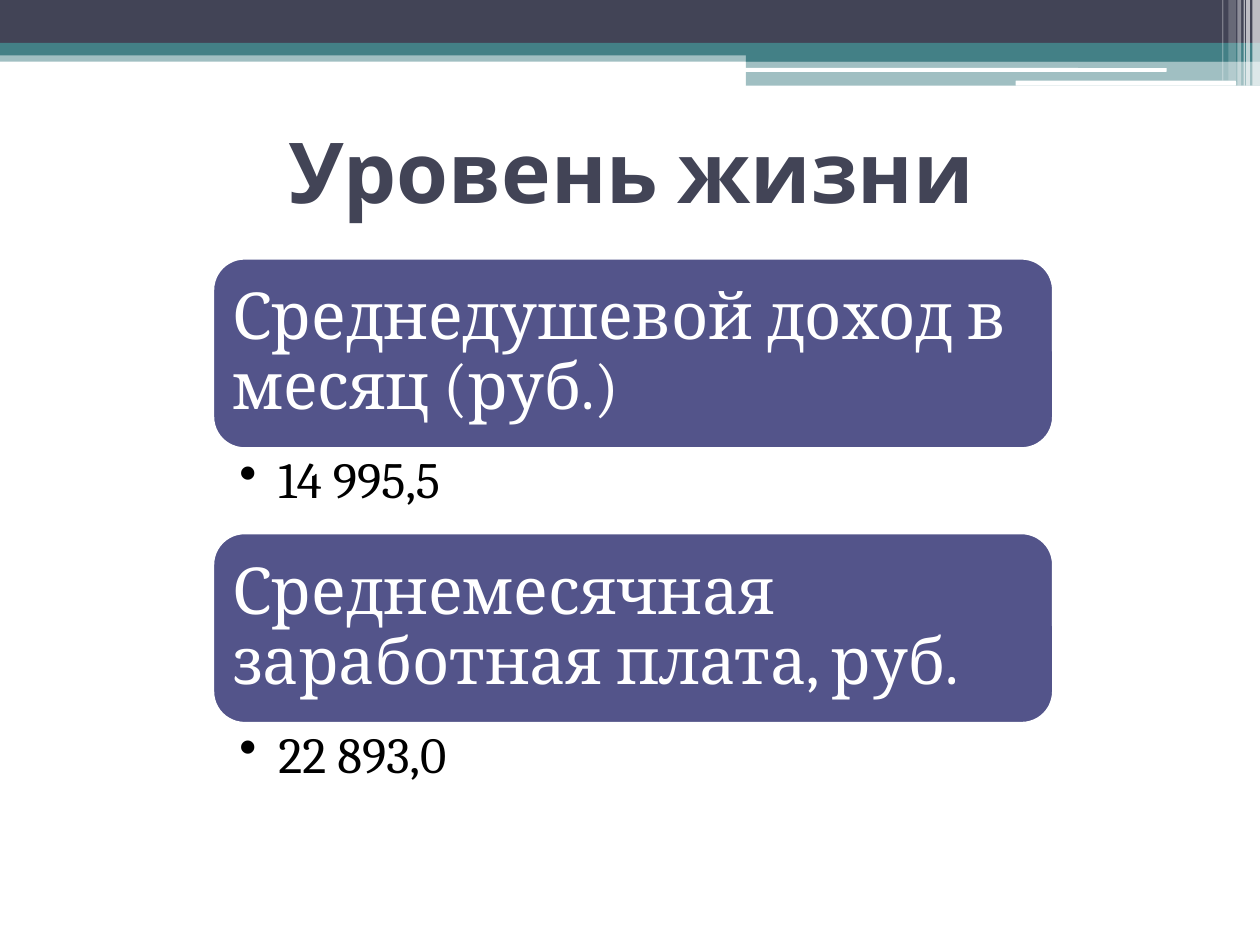
from lxml.etree import SubElement
from pptx import Presentation
from pptx.dml.color import RGBColor
from pptx.enum.shapes import MSO_SHAPE as Shape
from pptx.enum.text import MSO_ANCHOR as Anchor, MSO_AUTO_SIZE as AutoSize, PP_ALIGN as Align
from pptx.oxml.ns import qn
from pptx.util import Inches, Pt

COLORS = {"navy": "424456", "teal": "438086", "indigo": "53548A",
          "white": "FFFFFF", "black": "000000"}
TITLE = "Уровень жизни"
INDICATORS = [
    ("Среднедушевой доход в месяц (руб.)", "14 995,5"),
    ("Среднемесячная заработная плата, руб.", "22 893,0"),
]
BANDS = [
    (0, 0.4, 10, 0.09, "teal", 50),
    (0, 0, 10, 0.34, "navy", 100),
    (0, 0.34, 10, 0.1, "teal", 100),
    (5.92, 0.39, 4.08, 0.1, "teal", 100),
    (5.92, 0.48, 4.08, 0.2, "teal", 50),
]
RULES = [(5.91, 0.54, 3.35, 0.03), (8.06, 0.64, 1.75, 0.04)]
STRIPES = [
    (9.94, 0.06, 0.68, 65),
    (9.89, 0.03, 0.68, 65),
    (9.87, 0.01, 0.68, 60),
    (9.82, 0.03, 0.68, 40),
    (9.75, 0.06, 0.64, 20),
    (9.7, 0.01, 0.64, 30),
]
LEFT, TOP, WIDTH = 1.69, 2.05, 6.67
CARD_H, VALUE_H = 1.51, 0.67


def color(name):
    return RGBColor.from_string(COLORS[name])


def add_box(s, kind, x, y, w, h, fill, alpha=100, line=None):
    sp = s.shapes.add_shape(kind, Inches(x), Inches(y), Inches(w), Inches(h))
    sp.shadow.inherit = False
    sp.fill.solid()
    sp.fill.fore_color.rgb = color(fill)
    if alpha < 100:
        clr = sp.fill._xPr.find(qn("a:solidFill"))[0]
        SubElement(clr, qn("a:alpha"), val=str(alpha * 1000))
    if line:
        sp.line.color.rgb = color(line)
        sp.line.width = Pt(1.5)
    else:
        sp.line.fill.background()
    return sp


def write(sp, text, size, font, fill, bold=False, align=Align.LEFT,
          anchor=Anchor.MIDDLE, insets=(0.1, 0.05, 0.1, 0.05), spacing=None, indent=None):
    tf = sp.text_frame
    tf.word_wrap = True
    tf.auto_size = AutoSize.NONE
    tf.vertical_anchor = anchor
    tf.margin_left, tf.margin_top, tf.margin_right, tf.margin_bottom = map(Inches, insets)
    p = tf.paragraphs[0]
    p.alignment = align
    if spacing:
        p.line_spacing = spacing
    if indent:
        pPr = p._p.get_or_add_pPr()
        pPr.set("marL", str(Inches(indent)))
        pPr.set("indent", str(-Inches(indent)))
        SubElement(pPr, qn("a:buChar"), char="•")
    r = p.add_run()
    r.text = text
    r.font.size = Pt(size)
    r.font.name = font
    r.font.bold = bold
    r.font.color.rgb = color(fill)


prs = Presentation()
prs.slide_width, prs.slide_height = Inches(10), Inches(7.5)
s = prs.slides.add_slide(prs.slide_layouts[5])

for x, y, w, h, fill, alpha in BANDS:
    add_box(s, Shape.RECTANGLE, x, y, w, h, fill, alpha)
for x, y, w, h in RULES:
    add_box(s, Shape.ROUNDED_RECTANGLE, x, y, w, h, "white")
for x, w, h, alpha in STRIPES:
    add_box(s, Shape.RECTANGLE, x, 0, w, h, "white", alpha)

title = s.shapes.title
title.left, title.top, title.width, title.height = map(Inches, (0.51, 0.76, 9, 1.17))
write(title, TITLE, 48, "Cabin", "navy", bold=True, align=Align.CENTER)

for i, (label, value) in enumerate(INDICATORS):
    y = TOP + i * (CARD_H + VALUE_H)
    card = add_box(s, Shape.ROUNDED_RECTANGLE, LEFT, y, WIDTH, CARD_H, "indigo", line="white")
    write(card, label, 37, "Cambria", "white", insets=(0.08,) * 4, spacing=0.9)
    box = s.shapes.add_textbox(Inches(LEFT), Inches(y + CARD_H), Inches(WIDTH), Inches(VALUE_H))
    write(box, value, 29, "Cambria", "black", anchor=Anchor.TOP,
          insets=(0.21, 0.05, 0.29, 0.05), spacing=0.9, indent=0.31)

prs.save("out.pptx")
